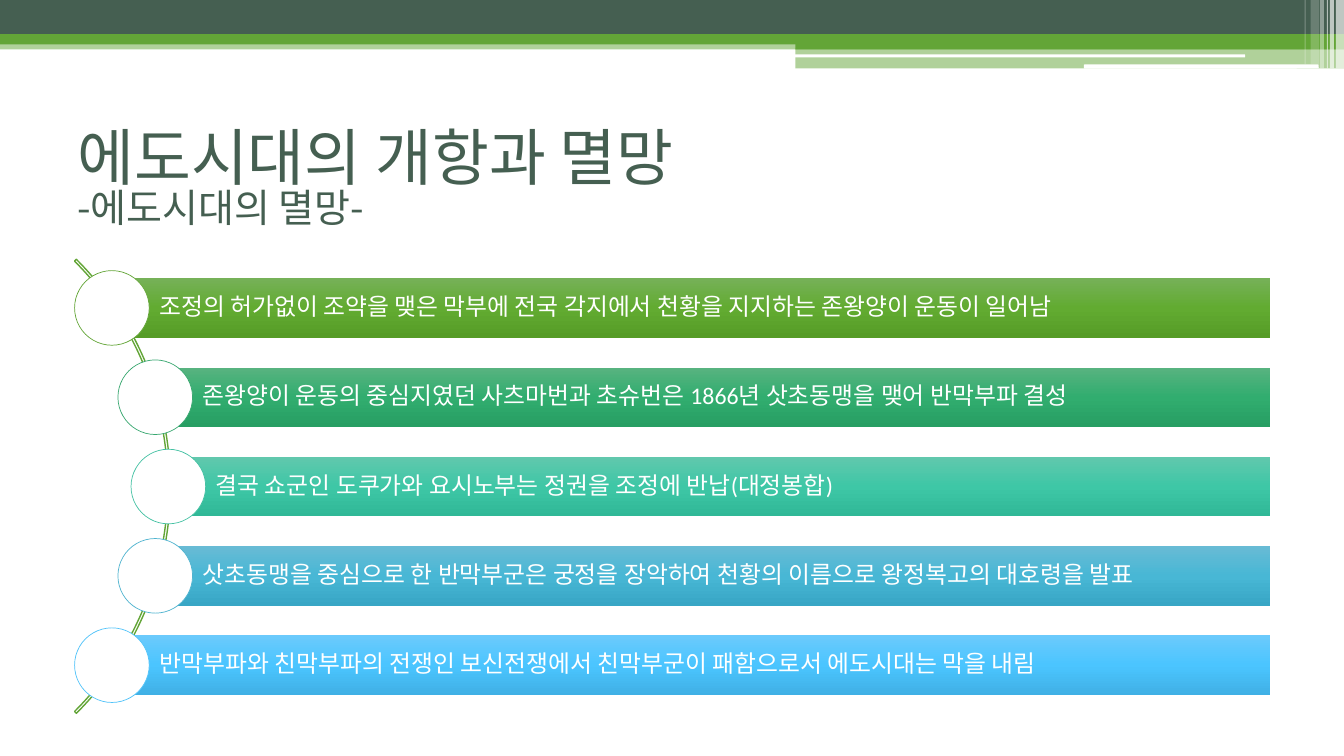
from copy import deepcopy

from lxml.etree import SubElement
from pptx import Presentation
from pptx.dml.color import RGBColor
from pptx.enum.shapes import MSO_SHAPE as Shape
from pptx.enum.text import MSO_ANCHOR as Anchor, PP_ALIGN as Align
from pptx.oxml.ns import qn
from pptx.util import Inches, Pt

WHITE = RGBColor(0xFF, 0xFF, 0xFF)
GREEN = RGBColor(0x63, 0xA5, 0x37)
DARK = RGBColor(0x45, 0x5F, 0x51)
TITLE_FONT = "Noto Sans CJK KR"
BODY_FONT = "Calibri"

# Header parts: shape, left, top, width, height, colour, opacity in percent
HEADER = [
    (Shape.RECTANGLE, 0, 0.4, 13.33, 0.09, GREEN, 50),
    (Shape.RECTANGLE, 0, 0, 13.33, 0.34, DARK, 100),
    (Shape.RECTANGLE, 0, 0.34, 13.33, 0.1, GREEN, 100),
    (Shape.RECTANGLE, 7.89, 0.39, 5.44, 0.1, GREEN, 100),
    (Shape.RECTANGLE, 7.89, 0.48, 5.44, 0.2, GREEN, 50),
    (Shape.ROUNDED_RECTANGLE, 7.88, 0.54, 4.47, 0.03, WHITE, 100),
    (Shape.ROUNDED_RECTANGLE, 10.75, 0.64, 2.33, 0.04, WHITE, 100),
]

# Stripes at the right end: left, width, height, opacity in percent
STRIPES = [
    (13.25, 0.08, 0.68, 65),
    (13.19, 0.04, 0.68, 65),
    (13.16, 0.01, 0.68, 60),
    (13.09, 0.04, 0.68, 40),
    (13.0, 0.08, 0.64, 20),
    (12.94, 0.01, 0.64, 30),
]

# Events: circle left, circle outline, bar gradient, text
EVENTS = [
    (0.74, "63A537", ("76B158", "62AB31", "569C27"),
     "조정의 허가없이 조약을 맺은 막부에 전국 각지에서 천황을 지지하는 존왕양이 운동이 일어남"),
    (1.17, "37A76F", ("58B380", "31AD6F", "279E63"),
     "존왕양이 운동의 중심지였던 사츠마번과 초슈번은 1866년 삿초동맹을 맺어 반막부파 결성"),
    (1.3, "44C1A3", ("61C8AD", "3EC7A6", "30B897"),
     "결국 쇼군인 도쿠가와 요시노부는 정권을 조정에 반납(대정봉합)"),
    (1.17, "4EB3CF", ("68BBD5", "48B7D5", "38A6C5"),
     "삿초동맹을 중심으로 한 반막부군은 궁정을 장악하여 천황의 이름으로 왕정복고의 대호령을 발표"),
    (0.74, "51C3F9", ("6BCAFC", "4BC5FF", "40B0E5"),
     "반막부파와 친막부파의 전쟁인 보신전쟁에서 친막부군이 패함으로서 에도시대는 막을 내림"),
]
FIRST_BAR_TOP = 2.76
ROW_PITCH = 0.886
BAR_RIGHT = 12.6
BAR_HEIGHT = 0.59
CIRCLE_SIZE = 0.74


def add_plain(slide, kind, left, top, width, height, color=None, opacity=100):
    """Add a shape without outline or shadow, and without fill if no colour."""
    shape = slide.shapes.add_shape(
        kind, Inches(left), Inches(top), Inches(width), Inches(height))
    shape.shadow.inherit = False
    shape.line.fill.background()
    if color is None:
        shape.fill.background()
        return shape
    shape.fill.solid()
    shape.fill.fore_color.rgb = color
    if opacity < 100:
        color_node = shape.fill._xPr.find(".//" + qn("a:srgbClr"))
        SubElement(color_node, qn("a:alpha")).set("val", str(opacity * 1000))
    return shape


def set_outline(shape, color, width):
    shape.line.color.rgb = color
    shape.line.width = Pt(width)


def set_gradient(shape, colors):
    """Fill from top to bottom with three evenly spaced colours."""
    shape.fill.gradient()
    shape.fill.gradient_angle = 270
    stop_list = shape._element.spPr.find(".//" + qn("a:gsLst"))
    stop_list.append(deepcopy(stop_list[0]))
    for stop, position, color in zip(shape.fill.gradient_stops, (0, 0.5, 1), colors):
        stop.position = position
        stop.color.rgb = RGBColor.from_string(color)


def set_margins(frame, left, top, right, bottom):
    frame.margin_left, frame.margin_top = Inches(left), Inches(top)
    frame.margin_right, frame.margin_bottom = Inches(right), Inches(bottom)


def add_header(slide):
    for part in HEADER:
        add_plain(slide, *part)
    for left, width, height, opacity in STRIPES:
        add_plain(slide, Shape.RECTANGLE, left, 0, width, height, WHITE, opacity)


def add_title(slide, title, subtitle):
    box = slide.shapes.add_textbox(
        Inches(0.67), Inches(1.25), Inches(12), Inches(1.17))
    frame = box.text_frame
    frame.word_wrap = True
    frame.vertical_anchor = Anchor.TOP
    set_margins(frame, 0.1, 0.07, 0.1, 0)
    para = frame.paragraphs[0]
    para.line_spacing = 0.8
    para.font.name = TITLE_FONT
    para.font.color.rgb = DARK
    font_node = para._p.pPr.find(qn("a:defRPr"))
    SubElement(font_node, qn("a:ea")).set("typeface", TITLE_FONT)
    span = para.add_run()
    span.text = title
    span.font.size = Pt(44.1)
    para.add_line_break()
    span = para.add_run()
    span.text = subtitle
    span.font.size = Pt(27.9)


def add_arc(slide):
    arc = add_plain(slide, Shape.BLOCK_ARC, -4.68, 1.64, 6.37, 6.37)
    for index, value in enumerate((189, 27, 0.004)):
        arc.adjustments[index] = value
    set_outline(arc, GREEN, 1)


def add_event(slide, row, circle_left, outline, gradient, text):
    # Bar with text, starting at the middle of the circle
    left = circle_left + CIRCLE_SIZE / 2
    top = FIRST_BAR_TOP + row * ROW_PITCH
    bar = add_plain(
        slide, Shape.RECTANGLE, left, top, BAR_RIGHT - left, BAR_HEIGHT)
    set_gradient(bar, gradient)
    frame = bar.text_frame
    frame.word_wrap = True
    frame.vertical_anchor = Anchor.MIDDLE
    set_margins(frame, 0.47, 0.05, 0.05, 0.05)
    para = frame.paragraphs[0]
    para.text = text
    para.alignment = Align.LEFT
    para.line_spacing = 0.9
    para.font.name = BODY_FONT
    para.font.size = Pt(17)
    para.font.color.rgb = WHITE

    # Circle, centred on the bar's height
    circle_top = top + (BAR_HEIGHT - CIRCLE_SIZE) / 2
    circle = add_plain(slide, Shape.OVAL, circle_left, circle_top,
                       CIRCLE_SIZE, CIRCLE_SIZE, WHITE)
    set_outline(circle, RGBColor.from_string(outline), 0.5)


def main():
    deck = Presentation()
    deck.slide_width, deck.slide_height = Inches(13.33), Inches(7.5)
    slide = deck.slides.add_slide(deck.slide_layouts[6])
    add_header(slide)
    add_title(slide, "에도시대의 개항과 멸망", "-에도시대의 멸망-")
    add_arc(slide)
    for row, event in enumerate(EVENTS):
        add_event(slide, row, *event)
    deck.save("out.pptx")


if __name__ == "__main__":
    main()
